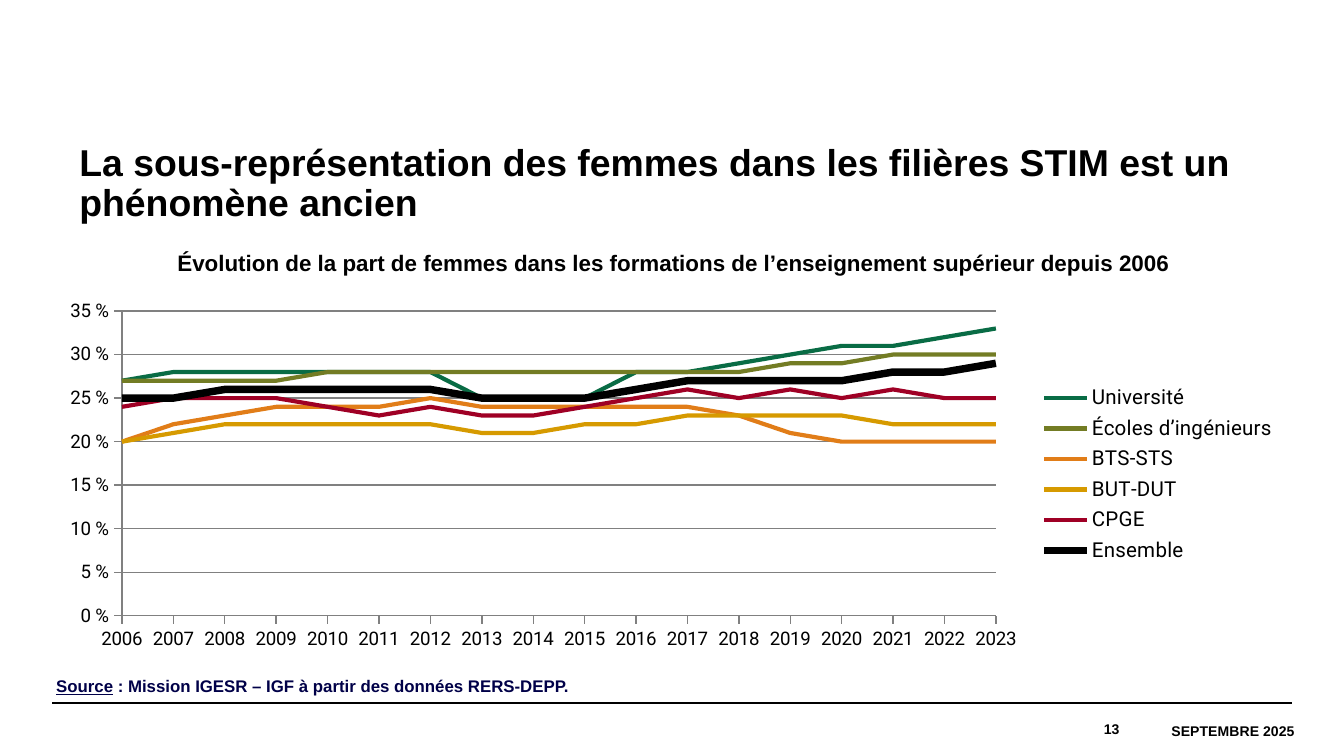
from lxml.etree import SubElement
from pptx import Presentation
from pptx.chart.data import CategoryChartData as Data
from pptx.dml.color import RGBColor as RGB
from pptx.enum.chart import XL_CHART_TYPE as Kind, XL_LEGEND_POSITION as Side, XL_TICK_MARK as Tick
from pptx.enum.shapes import MSO_CONNECTOR as Conn
from pptx.enum.text import MSO_ANCHOR as Anchor, PP_ALIGN as Align
from pptx.oxml.ns import qn
from pptx.util import Inches, Pt

BLACK = RGB(0x00, 0x00, 0x00)
NAVY = RGB(0x00, 0x00, 0x48)
GREY = RGB(0x80, 0x80, 0x80)
GREEN = RGB(0x09, 0x6C, 0x45)
OLIVE = RGB(0x73, 0x7C, 0x24)
ORANGE = RGB(0xE1, 0x7D, 0x18)
GOLD = RGB(0xD6, 0x9A, 0x00)
RED = RGB(0x9F, 0x00, 0x25)

YEARS = range(2006, 2024)
SERIES = [
    ("Université", GREEN, 2.25,
     [27, 28, 28, 28, 28, 28, 28, 25, 25, 25, 28, 28, 29, 30, 31, 31, 32, 33]),
    ("Écoles d’ingénieurs", OLIVE, 2.25,
     [27, 27, 27, 27, 28, 28, 28, 28, 28, 28, 28, 28, 28, 29, 29, 30, 30, 30]),
    ("BTS-STS", ORANGE, 2.25,
     [20, 22, 23, 24, 24, 24, 25, 24, 24, 24, 24, 24, 23, 21, 20, 20, 20, 20]),
    ("BUT-DUT", GOLD, 2.25,
     [20, 21, 22, 22, 22, 22, 22, 21, 21, 22, 22, 23, 23, 23, 23, 22, 22, 22]),
    ("CPGE", RED, 2.25,
     [24, 25, 25, 25, 24, 23, 24, 23, 23, 24, 25, 26, 25, 26, 25, 26, 25, 25]),
    ("Ensemble", BLACK, 4,
     [25, 25, 26, 26, 26, 26, 26, 25, 25, 25, 26, 27, 27, 27, 27, 28, 28, 29]),
]


def assign(item, values):
    for name, value in values.items():
        setattr(item, name, value)


def style(font, size, color=BLACK, face="Arial", **more):
    assign(font, {"size": Pt(size), "name": face, **more})
    font.color.rgb = color


def add_text(slide, box, runs, size, color=BLACK, align=Align.LEFT,
             anchor=Anchor.TOP, pad=0, gap=None):
    frame = slide.shapes.add_textbox(*map(Inches, box)).text_frame
    side, edge = (Inches(0.1), Inches(0.05)) if pad else (0, 0)
    assign(frame, {"word_wrap": True, "vertical_anchor": anchor,
                   "margin_left": side, "margin_right": side,
                   "margin_top": edge, "margin_bottom": edge})
    para = frame.paragraphs[0]
    assign(para, {"alignment": align, "line_spacing": gap})
    for text, under in runs:
        run = para.add_run()
        run.text = text
        style(run.font, size, color, bold=True, underline=under)


def add_head(slide, box):
    left, top, width, height = box
    title = "La sous-représentation des femmes dans les filières STIM est un phénomène ancien"
    topic = "Évolution de la part de femmes dans les formations de l’enseignement supérieur depuis 2006"
    add_text(slide, (left + 0.2, top, width + 0.04, 0.59),
             [(title, False)], 20, gap=0.9)
    add_text(slide, (left, top + height - 0.45, width, 0.45), [(topic, False)], 12,
             align=Align.CENTER, anchor=Anchor.MIDDLE)


def set_layout(parent, index, inner, box):
    for old in parent.findall(qn("c:layout")):
        parent.remove(old)
    layout = SubElement(parent, qn("c:layout"))
    parent.insert(index, layout)
    manual = SubElement(layout, qn("c:manualLayout"))
    marks = [("layoutTarget", "inner")] if inner else []
    marks += [("xMode", "edge"), ("yMode", "edge"), *zip("xywh", box)]
    for name, value in marks:
        SubElement(manual, qn(f"c:{name}")).set("val", str(value))


def style_axes(chart):
    rate = chart.value_axis
    assign(rate, {"minimum_scale": 0, "maximum_scale": 0.35, "major_unit": 0.05,
                  "has_major_gridlines": True})
    assign(rate.tick_labels, {"number_format": "0\\ %", "number_format_is_linked": False})
    for axis in (rate, chart.category_axis):
        assign(axis, {"major_tick_mark": Tick.OUTSIDE, "minor_tick_mark": Tick.NONE})
        style(axis.tick_labels.font, 10, face="Roboto")
        axis.format.line.color.rgb = GREY
        axis.format.line.width = Pt(0.75)
    grid = rate.major_gridlines.format.line
    grid.color.rgb = GREY
    grid.width = Pt(0.75)
    node = rate._element
    for old in node.findall(qn("c:crossBetween")):
        node.remove(old)
    cross = SubElement(node, qn("c:crossBetween"))
    cross.set("val", "midCat")
    node.find(qn("c:crosses")).addnext(cross)


def add_trend(slide, box):
    data = Data(number_format="0\\ %")
    data.categories = [str(year) for year in YEARS]
    for name, color, width, rates in SERIES:
        data.add_series(name, [rate / 100 for rate in rates])
    chart = slide.shapes.add_chart(Kind.LINE, *map(Inches, box), data).chart
    assign(chart, {"has_title": False, "has_legend": True})
    style(chart.font, 10)
    style_axes(chart)
    plot = chart.plots[0]
    plot.vary_by_categories = False
    for line, (name, color, width, rates) in zip(plot.series, SERIES):
        line.smooth = False
        line.format.line.color.rgb = color
        line.format.line.width = Pt(width)
    legend = chart.legend
    assign(legend, {"position": Side.RIGHT, "include_in_layout": False})
    style(legend.font, 11, face="Roboto")
    area = chart._chartSpace.find(f".//{qn('c:plotArea')}")
    set_layout(area, 0, True, (0.06, 0.05, 0.7, 0.84))
    set_layout(legend._element, 1, False, (0.79, 0.24, 0.2, 0.52))


def add_foot(slide, box):
    left, top, width, height = box
    rule = slide.shapes.add_connector(
        Conn.STRAIGHT, *map(Inches, (left, top + 0.25, left + width, top + 0.25)))
    rule.line.color.rgb = BLACK
    rule.line.width = Pt(0.8)
    SubElement(rule._element.spPr, qn("a:effectLst"))
    source = [("Source", True),
              (" : Mission IGESR – IGF à partir des données RERS-DEPP.", False)]
    add_text(slide, (left - 0.07, top, 4.76, 0.25), source, 9, NAVY, pad=1)
    add_text(slide, (left + 8.06, top + 0.35, 1.28, 0.39), [("SEPTEMBRE 2025", False)],
             7.5, align=Align.RIGHT, pad=1)
    add_text(slide, (left + 6.46, top + 0.25, 1.48, 0.39), [("13", False)],
             7.5, align=Align.RIGHT, anchor=Anchor.MIDDLE)


def main():
    deck = Presentation()
    wide = Inches(10)
    assign(deck, {"slide_width": wide, "slide_height": wide * 9 // 16})
    slide = deck.slides.add_slide(deck.slide_layouts[6])
    add_head(slide, (0.39, 1.07, 9.25, 1.11))
    add_trend(slide, (0.35, 2.18, 9.29, 2.7))
    add_foot(slide, (0.39, 4.98, 9.22, 0.64))
    deck.save("out.pptx")


if __name__ == "__main__":
    main()
